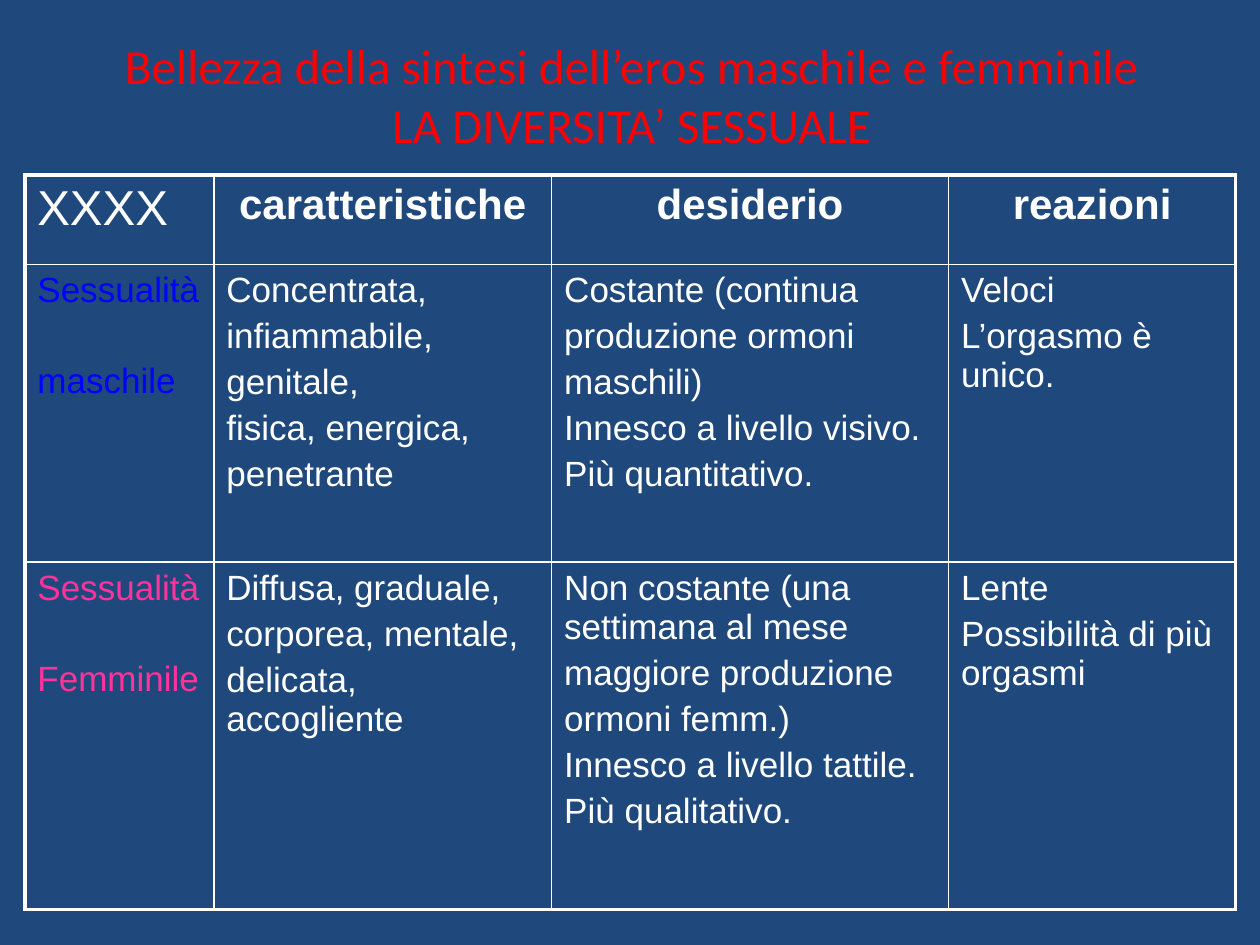
"""Build a slide that compares two kinds of sexuality in a bordered table."""
from dataclasses import dataclass

from lxml import etree
from pptx import Presentation
from pptx.dml.color import RGBColor
from pptx.enum import text
from pptx.oxml import ns
from pptx.util import Cm, Pt

HUES = {"back": "1F497D", "title": "FF0000", "white": "FFFFFF", "male": "0000FF", "female": "FF3399"}
COLS = (3.81, 6.81, 8, 5.79)
ROWS = (1.8, 6, 7.01)
THIN, THICK = 1, 2.25


@dataclass
class Entry:
    words: str
    hue: str = "white"
    size: int = 20
    bold: bool = False
    mid: bool = False
    gap: int = 4


def head(words: str) -> Entry:
    return Entry(words, size=24, bold=True, mid=True)


GRID = (
    (Entry("XXXX", size=28), head("caratteristiche"), head("desiderio"), head("reazioni")),
    (
        Entry("Sessualità\nmaschile", "male", gap=30),
        Entry("Concentrata,\ninfiammabile,\ngenitale,\nfisica, energica,\npenetrante"),
        Entry("Costante (continua\nproduzione ormoni\nmaschili)\nInnesco a livello visivo.\nPiù quantitativo."),
        Entry("Veloci\nL’orgasmo è unico."),
    ),
    (
        Entry("Sessualità\nFemminile", "female", gap=30),
        Entry("Diffusa, graduale,\ncorporea, mentale,\ndelicata, accogliente"),
        Entry("Non costante (una settimana al mese\nmaggiore produzione\normoni femm.)\n"
              "Innesco a livello tattile.\nPiù qualitativo."),
        Entry("Lente\nPossibilità di più orgasmi"),
    ),
)


def write(frame, entry: Entry, face: str) -> None:
    frame.text = entry.words
    for i, para in enumerate(frame.paragraphs):
        para.alignment = text.PP_ALIGN.CENTER if entry.mid else text.PP_ALIGN.LEFT
        para.space_before = Pt(entry.gap if i else 0)
        for run in para.runs:
            run.font.name = face
            run.font.size = Pt(entry.size)
            run.font.bold = entry.bold
            run.font.color.rgb = RGBColor.from_string(HUES[entry.hue])


def border(cell, row: int, col: int) -> None:
    outer = {"L": col == 0, "R": col == len(COLS) - 1, "T": row == 0, "B": row == len(ROWS) - 1}
    props = cell._tc.get_or_add_tcPr()
    for side, edge in outer.items():
        line = etree.SubElement(props, ns.qn(f"a:ln{side}"), w=str(Pt(THICK if edge else THIN)))
        fill = etree.SubElement(line, ns.qn("a:solidFill"))
        etree.SubElement(fill, ns.qn("a:srgbClr"), val=HUES["white"])


def add_title(slide) -> None:
    frame = slide.shapes.add_textbox(Cm(1.3), Cm(0), Cm(22.86), Cm(3.81)).text_frame
    frame.word_wrap = True
    frame.vertical_anchor = text.MSO_ANCHOR.MIDDLE
    words = "Bellezza della sintesi dell’eros maschile e femminile\vLA DIVERSITA’ SESSUALE"
    write(frame, Entry(words, "title", 28, mid=True), "Calibri")


def add_grid(slide) -> None:
    area = Cm(0.5), Cm(3.53), Cm(sum(COLS)), Cm(sum(ROWS))
    table = slide.shapes.add_table(len(ROWS), len(COLS), *area).table
    table.first_row = table.horz_banding = False
    for col, width in zip(table.columns, COLS):
        col.width = Cm(width)
    for r, (row, height) in enumerate(zip(table.rows, ROWS)):
        row.height = Cm(height)
        for c, cell in enumerate(row.cells):
            write(cell.text_frame, GRID[r][c], "Arial")
            border(cell, r, c)
            cell.fill.background()


def main() -> None:
    deck = Presentation()
    deck.slide_width, deck.slide_height = Cm(25.4), Cm(19.05)
    slide = deck.slides.add_slide(deck.slide_layouts[6])
    back = slide.background.fill
    back.solid()
    back.fore_color.rgb = RGBColor.from_string(HUES["back"])
    add_title(slide)
    add_grid(slide)
    deck.save("out.pptx")


if __name__ == "__main__":
    main()
